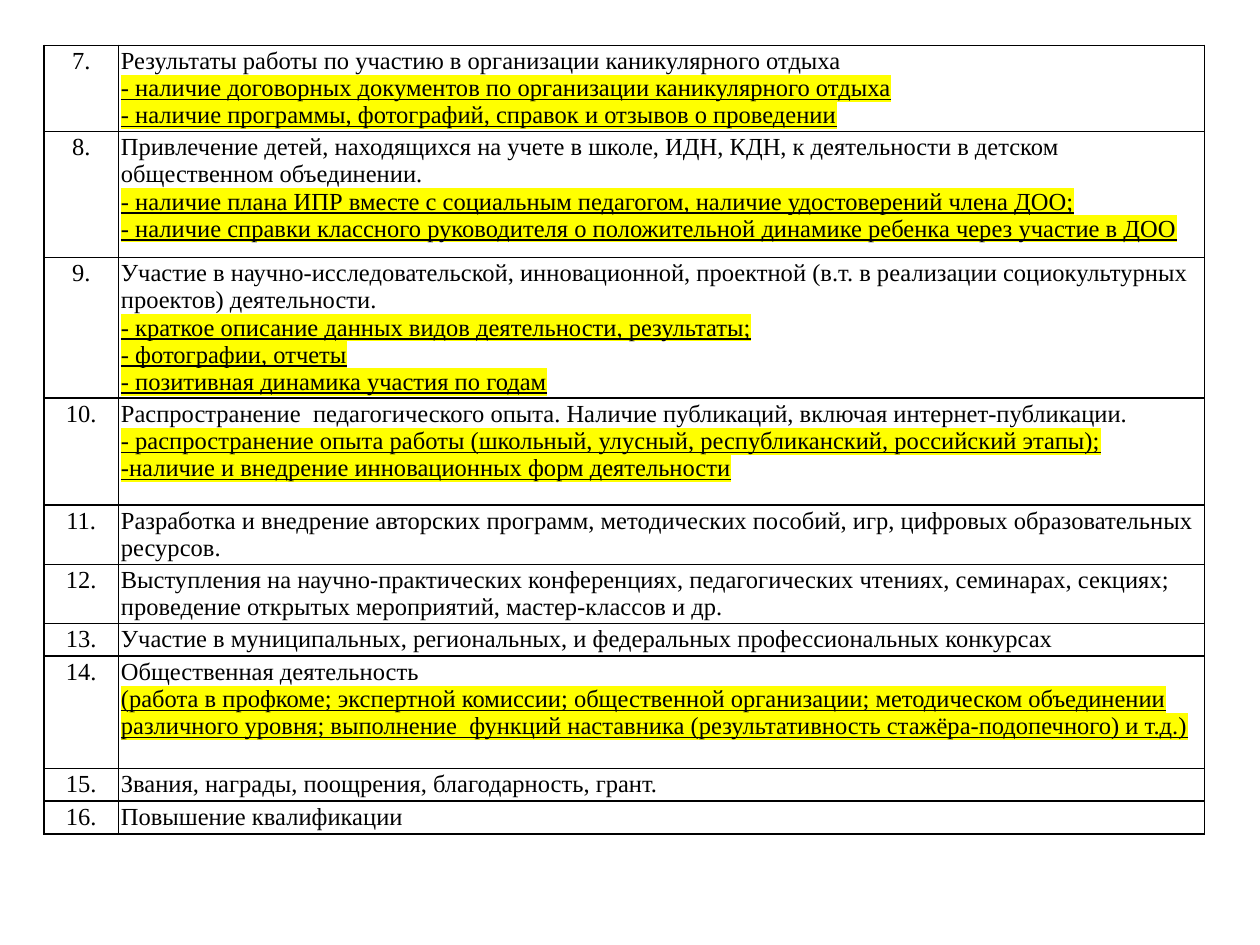
from lxml.etree import SubElement
from pptx import Presentation
from pptx.dml.color import RGBColor
from pptx.enum.text import PP_ALIGN as Align
from pptx.oxml import parse_xml
from pptx.oxml.ns import qn
from pptx.util import Inches, Pt

NS = 'xmlns:a="http://schemas.openxmlformats.org/drawingml/2006/main"'

# Row height, criterion, highlighted evidence lines
CRITERIA = [
    (0.68, "Результаты работы по участию в организации каникулярного отдыха",
     ["- наличие договорных документов по организации каникулярного отдыха",
      "- наличие программы, фотографий, справок и отзывов о проведении"]),
    (1.0, "Привлечение детей, находящихся на учете в школе, ИДН, КДН, к деятельности "
          "в детском общественном объединении.",
     ["- наличие плана ИПР вместе с социальным педагогом, наличие удостоверений члена ДОО;",
      "- наличие справки классного руководителя о положительной динамике ребенка "
      "через участие в ДОО"]),
    (1.1, "Участие в научно-исследовательской, инновационной, проектной "
          "(в.т. в реализации социокультурных проектов) деятельности.",
     ["- краткое описание данных видов деятельности, результаты;",
      "- фотографии, отчеты",
      "- позитивная динамика участия по годам"]),
    (0.85, "Распространение  педагогического опыта. Наличие публикаций, "
           "включая интернет-публикации.",
     ["- распространение опыта работы (школьный, улусный, республиканский, российский этапы);",
      "-наличие и внедрение инновационных форм деятельности"]),
    (0.47, "Разработка и внедрение авторских программ, методических пособий, игр, "
           "цифровых образовательных  ресурсов.", []),
    (0.47, "Выступления на научно-практических конференциях, педагогических чтениях, "
           "семинарах, секциях; проведение открытых мероприятий, мастер-классов и др.", []),
    (0.26, "Участие в муниципальных, региональных, и федеральных "
           "профессиональных конкурсах", []),
    (0.89, "Общественная деятельность",
     ["(работа в профкоме; экспертной комиссии; общественной организации; методическом "
      "объединении различного уровня; выполнение  функций наставника "
      "(результативность стажёра-подопечного) и т.д.)"]),
    (0.26, "Звания, награды, поощрения, благодарность, грант.", []),
    (0.26, "Повышение квалификации", []),
]
FIRST_NUMBER = 7
COLUMN_WIDTHS = [0.59, 8.62]


def color(value):
    return RGBColor.from_string(value)


class CriteriaSlide:
    font = "Times New Roman"
    size = 14
    ink = "000000"
    paper = "FFFFFF"
    marker = "FFFF00"
    inset = 0.02

    def __init__(self, prs):
        self.slide = prs.slides.add_slide(prs.slide_layouts[6])

    def table(self, left, top, widths, heights):
        frame = self.slide.shapes.add_table(
            len(heights), len(widths), Inches(left), Inches(top),
            Inches(sum(widths)), Inches(sum(heights)))
        table = frame.table
        table.first_row = table.horz_banding = False
        for column, width in zip(table.columns, widths):
            column.width = Inches(width)
        for row, height in zip(table.rows, heights):
            row.height = Inches(height)
        return table

    def borders(self, cell):
        tc_pr = cell._tc.get_or_add_tcPr()
        for side in ("lnL", "lnR", "lnT", "lnB"):
            line = SubElement(tc_pr, qn(f"a:{side}"), w=str(Pt(1)))
            fill = SubElement(line, qn("a:solidFill"))
            SubElement(fill, qn("a:srgbClr"), val=self.ink)

    def cell(self, cell, lines, align=Align.LEFT):
        """Fill a cell; every line after the first is underlined and highlighted."""
        self.borders(cell)
        cell.fill.solid()
        cell.fill.fore_color.rgb = color(self.paper)
        cell.margin_left = cell.margin_right = Inches(self.inset)
        cell.margin_top = cell.margin_bottom = Inches(self.inset)
        tf = cell.text_frame
        tf.text = "\n".join(lines)
        for i, p in enumerate(tf.paragraphs):
            p.alignment = align
            for r in p.runs:
                r.font.size = Pt(self.size)
                r.font.name = self.font
                r.font.color.rgb = color(self.ink)
                if i:
                    self.highlight(r)

    def highlight(self, r):
        r.font.underline = True
        r._r.rPr.find(qn("a:solidFill")).addnext(parse_xml(
            f'<a:highlight {NS}><a:srgbClr val="{self.marker}"/></a:highlight>'))


def main():
    prs = Presentation()
    prs.slide_width, prs.slide_height = Inches(10), Inches(7.5)
    s = CriteriaSlide(prs)
    table = s.table(0.35, 0.36, COLUMN_WIDTHS, [height for height, _, _ in CRITERIA])
    for i, (_, criterion, evidence) in enumerate(CRITERIA):
        s.cell(table.cell(i, 0), [f"{FIRST_NUMBER + i}."], Align.CENTER)
        s.cell(table.cell(i, 1), [criterion, *evidence])
    prs.save("out.pptx")


if __name__ == "__main__":
    main()
